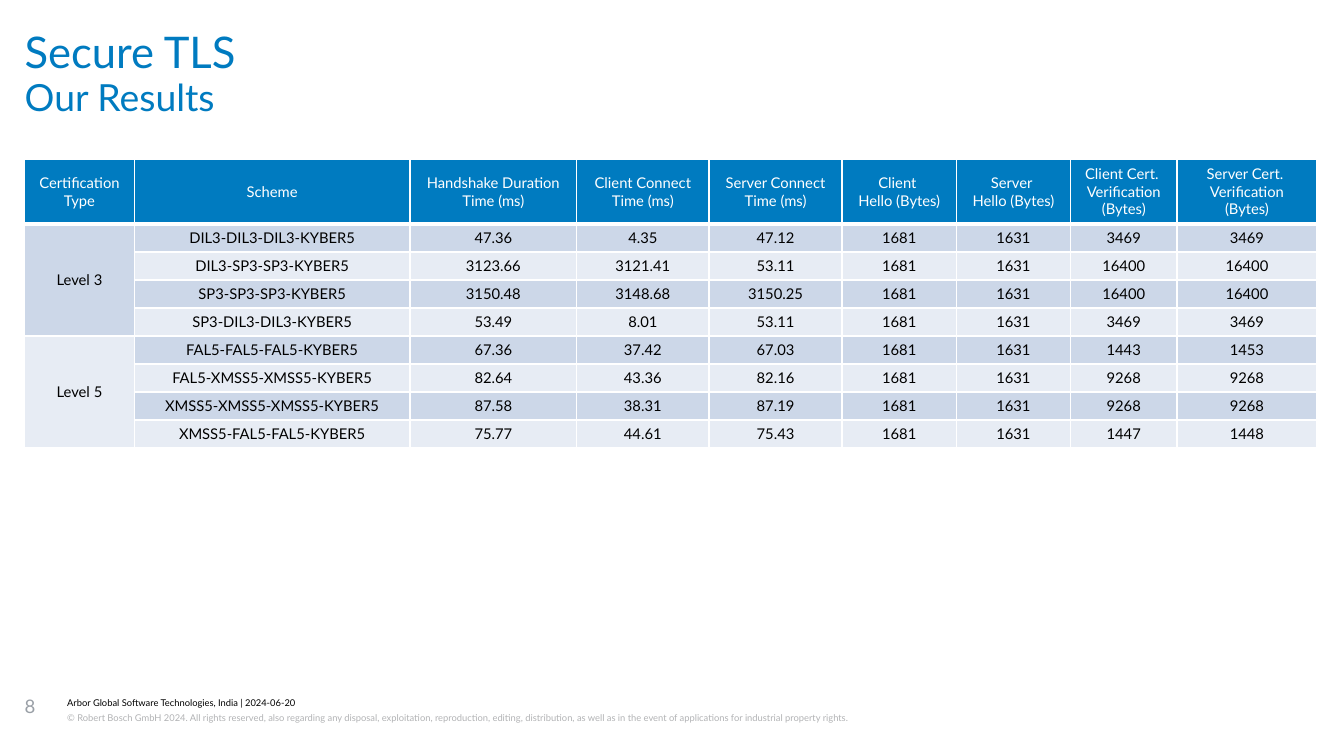
from pptx import Presentation
from pptx.dml.color import RGBColor
from pptx.enum.text import MSO_ANCHOR, PP_ALIGN
from pptx.oxml import parse_xml
from pptx.oxml.ns import nsdecls
from pptx.util import Inches, Pt

FONT = "Lato"
BLUE, WHITE, BLACK = "007BC0", "FFFFFF", "000000"
BANDS = ["CCD7E8", "E7ECF4"]
LEFT, TABLE_TOP = 0.22, 1.42
HEADER_H, ROW_H = 0.58, 0.25

# Text boxes: text, (left, top, width, height), size, colour, paragraph format
TEXTS = [
    ("Arbor Global Software Technologies, India | 2024-06-20",
     (0.6, 6.22, 9.98, 0.12), 6, BLACK, {"line_spacing": 1.07, "space_after": Pt(1)}),
    ("© Robert Bosch GmbH 2024. All rights reserved, also regarding any disposal, "
     "exploitation, reproduction, editing, distribution, as well as in the event of "
     "applications for industrial property rights.",
     (0.6, 6.34, 9.98, 0.24), 6, "B2B3B5", {"line_spacing": 1.2, "space_after": Pt(1)}),
    ("Our Results", (LEFT, 0.71, 11.55, 0.43), 24, BLUE, {"line_spacing": 0.89}),
    ("Secure TLS", (LEFT, 0.28, 11.55, 0.43), 28, BLUE, {"line_spacing": 0.89}),
    ("8", (LEFT, 6.2, 0.32, 0.45), 12, "999FA6", {}),
]

# Columns: heading (\n new paragraph, \v line break), width
COLUMNS = [
    ("Certification Type", 0.98),
    ("Scheme", 2.46),
    ("Handshake Duration\nTime (ms)", 1.49),
    ("Client Connect\nTime (ms)", 1.18),
    ("Server Connect\nTime (ms)", 1.19),
    ("Client \vHello (Bytes)", 1.02),
    ("Server \vHello (Bytes)", 1.02),
    ("Client Cert. \vVerification (Bytes)", 0.95),
    ("Server Cert. \vVerification (Bytes)", 1.25),
]
LEVELS = {
    "Level 3": [
        ("DIL3-DIL3-DIL3-KYBER5", "47.36", "4.35", "47.12", "1681", "1631", "3469", "3469"),
        ("DIL3-SP3-SP3-KYBER5", "3123.66", "3121.41", "53.11", "1681", "1631", "16400", "16400"),
        ("SP3-SP3-SP3-KYBER5", "3150.48", "3148.68", "3150.25", "1681", "1631", "16400", "16400"),
        ("SP3-DIL3-DIL3-KYBER5", "53.49", "8.01", "53.11", "1681", "1631", "3469", "3469"),
    ],
    "Level 5": [
        ("FAL5-FAL5-FAL5-KYBER5", "67.36", "37.42", "67.03", "1681", "1631", "1443", "1453"),
        ("FAL5-XMSS5-XMSS5-KYBER5", "82.64", "43.36", "82.16", "1681", "1631", "9268", "9268"),
        ("XMSS5-XMSS5-XMSS5-KYBER5", "87.58", "38.31", "87.19", "1681", "1631", "9268", "9268"),
        ("XMSS5-FAL5-FAL5-KYBER5", "75.77", "44.61", "75.43", "1681", "1631", "1447", "1448"),
    ],
}


def rgb(color):
    return RGBColor.from_string(color)


def write(tf, text, size, color, fmt):
    tf.text = text
    for p in tf.paragraphs:
        for name, value in fmt.items():
            setattr(p, name, value)
        for r in p.runs:
            for name, value in {"name": FONT, "size": Pt(size), "bold": False}.items():
                setattr(r.font, name, value)
            r.font.color.rgb = rgb(color)


def add_text(s, text, box, size, color, fmt):
    tf = s.shapes.add_textbox(*map(Inches, box)).text_frame
    tf.word_wrap = True
    tf.margin_left = tf.margin_top = tf.margin_right = tf.margin_bottom = 0
    write(tf, text, size, color, fmt)


def style_cell(cell, fill, bottom=1):
    tc_pr = cell._tc.get_or_add_tcPr()
    for side, width in {"L": 1, "R": 1, "T": 1, "B": bottom}.items():
        tc_pr.append(parse_xml(
            f'<a:ln{side} {nsdecls("a")} w="{Pt(width)}"><a:solidFill>'
            f'<a:srgbClr val="{WHITE}"/></a:solidFill></a:ln{side}>'))
    cell.fill.solid()
    cell.fill.fore_color.rgb = rgb(fill)
    cell.vertical_anchor = MSO_ANCHOR.MIDDLE
    cell.margin_left = cell.margin_right = Inches(0.09)
    cell.margin_top = cell.margin_bottom = Inches(0.04)


def fill_cell(cell, text, color, fill, bottom=1):
    style_cell(cell, fill, bottom)
    write(cell.text_frame, text, 9.5, color, {"alignment": PP_ALIGN.CENTER})


def add_results(s):
    count = sum(map(len, LEVELS.values()))
    width = sum(w for _, w in COLUMNS)
    box = (LEFT, TABLE_TOP, width, HEADER_H + count * ROW_H)
    table = s.shapes.add_table(count + 1, len(COLUMNS), *map(Inches, box)).table
    for i, row in enumerate(table.rows):
        row.height = Inches(ROW_H if i else HEADER_H)

    # Header row
    for c, (heading, w) in enumerate(COLUMNS):
        table.columns[c].width = Inches(w)
        fill_cell(table.cell(0, c), heading, WHITE, BLUE, bottom=3)

    # One merged label per level, banded rows beside it
    top = 1
    for n, (level, rows) in enumerate(LEVELS.items()):
        for i, values in enumerate(rows):
            style_cell(table.cell(top + i, 0), BANDS[n])
            for c, value in enumerate(values, 1):
                fill_cell(table.cell(top + i, c), value, BLACK, BANDS[i % 2])
        label = table.cell(top, 0)
        label.merge(table.cell(top + len(rows) - 1, 0))
        write(label.text_frame, level, 9.5, BLACK, {"alignment": PP_ALIGN.CENTER})
        top += len(rows)


def main():
    prs = Presentation()
    prs.slide_width, prs.slide_height = Inches(12), Inches(6.75)
    s = prs.slides.add_slide(prs.slide_layouts[6])
    for item in TEXTS:
        add_text(s, *item)
    add_results(s)
    prs.save("out.pptx")


if __name__ == "__main__":
    main()
